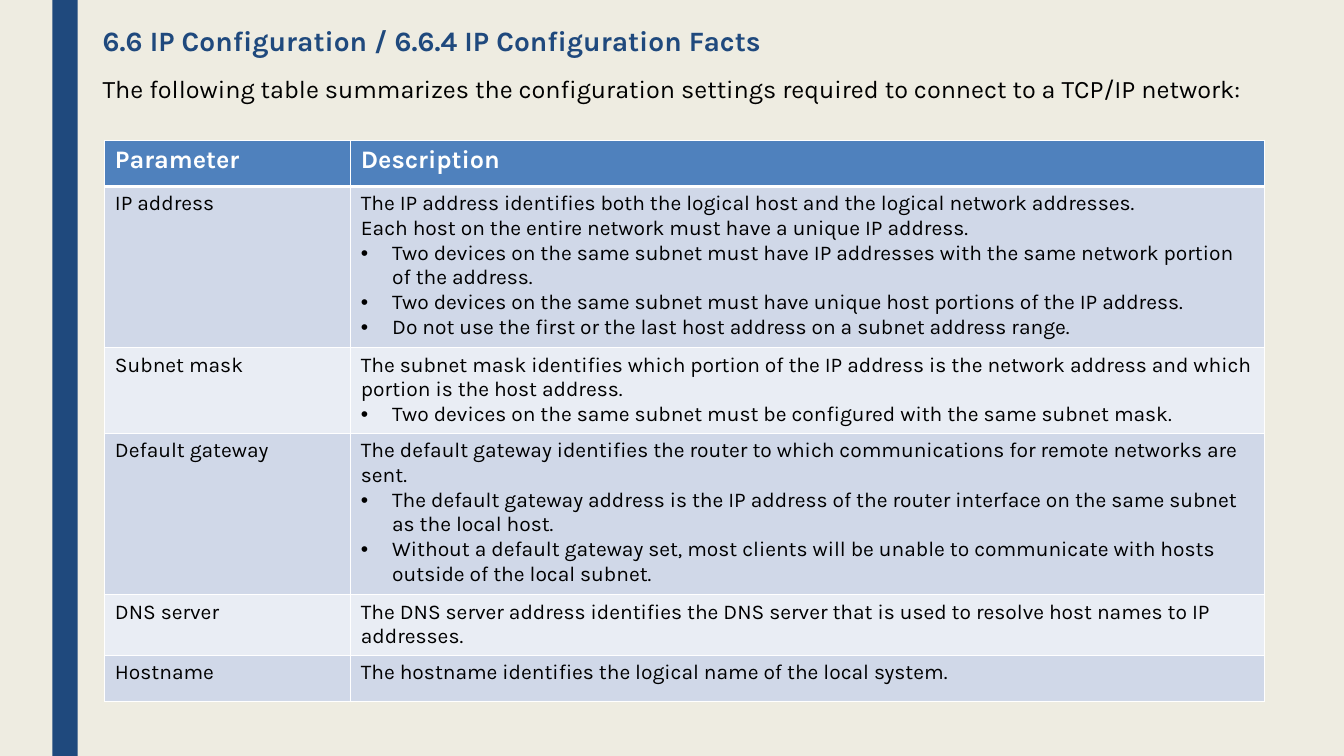
import pptx
import pptx.util
import pptx.dml.color
import pptx.enum.shapes
import pptx.oxml
import pptx.oxml.ns
from pptx.util import Inches

RGBColor = pptx.dml.color.RGBColor
NAVY = RGBColor(0x1F, 0x49, 0x7D)
CREAM = RGBColor(0xEE, 0xEC, 0xE1)
BLUE = RGBColor(0x4F, 0x81, 0xBD)
BAND_DARK = RGBColor(0xD0, 0xD8, 0xE8)
BAND_LIGHT = RGBColor(0xE9, 0xED, 0xF4)
WHITE = RGBColor(0xFF, 0xFF, 0xFF)
BLACK = RGBColor(0, 0, 0)
FONT = "Karla"
BULLET = "• "

# Each row: height, parameter, description paragraphs
ROWS = [
    (0.46, "Parameter", ["Description"]),
    (1.57, "IP address", [
        "The IP address identifies both the logical host and the logical network addresses.",
        "Each host on the entire network must have a unique IP address.",
        "• Two devices on the same subnet must have IP addresses with the same network portion of the address.",
        "• Two devices on the same subnet must have unique host portions of the IP address.",
        "• Do not use the first or the last host address on a subnet address range."]),
    (0.84, "Subnet mask", [
        "The subnet mask identifies which portion of the IP address is the network address and which portion is the host address.",
        "• Two devices on the same subnet must be configured with the same subnet mask."]),
    (1.57, "Default gateway", [
        "The default gateway identifies the router to which communications for remote networks are sent.",
        "• The default gateway address is the IP address of the router interface on the same subnet as the local host.",
        "• Without a default gateway set, most clients will be unable to communicate with hosts outside of the local subnet."]),
    (0.59, "DNS server", [
        "The DNS server address identifies the DNS server that is used to resolve host names to IP addresses."]),
    (0.46, "Hostname", ["The hostname identifies the logical name of the local system."]),
]


def write(tf, lines, size, color, bold=False):
    """Fill a text frame, turning lines that start with a bullet into list items."""
    tf.word_wrap = True
    for i, line in enumerate(lines):
        p = tf.paragraphs[0] if i == 0 else tf.add_paragraph()
        if line.startswith(BULLET):
            pPr = p._p.get_or_add_pPr()
            pPr.set("marL", str(Inches(0.31)))
            pPr.set("indent", str(Inches(-0.31)))
            ns = pptx.oxml.ns.nsdecls("a")
            pPr.append(pptx.oxml.parse_xml(f'<a:buFont {ns} typeface="Arial"/>'))
            pPr.append(pptx.oxml.parse_xml(f'<a:buChar {ns} char="•"/>'))
        r = p.add_run()
        r.text = line.removeprefix(BULLET)
        r.font.name = FONT
        r.font.size = pptx.util.Pt(size)
        r.font.bold = bold
        r.font.color.rgb = color


def add_borders(cell, bottom_width):
    """Draw white lines round a cell; call before its fill is set."""
    tcPr = cell._tc.get_or_add_tcPr()
    for side, width in (("L", 1), ("R", 1), ("T", 1), ("B", bottom_width)):
        tcPr.append(pptx.oxml.parse_xml(
            f'<a:ln{side} {pptx.oxml.ns.nsdecls("a")} w="{pptx.util.Pt(width)}">'
            f'<a:solidFill><a:srgbClr val="{WHITE}"/></a:solidFill></a:ln{side}>'))


prs = pptx.Presentation()
prs.slide_width = Inches(13.33)
prs.slide_height = Inches(7.5)
s = prs.slides.add_slide(prs.slide_layouts[6])
s.background.fill.solid()
s.background.fill.fore_color.rgb = CREAM

# Side stripe
stripe = s.shapes.add_shape(pptx.enum.shapes.MSO_SHAPE.RECTANGLE,
                            Inches(0.52), 0, Inches(0.25), prs.slide_height)
stripe.shadow.inherit = False
stripe.fill.solid()
stripe.fill.fore_color.rgb = NAVY
stripe.line.fill.background()

# Title
title = s.shapes.add_textbox(Inches(0.92), Inches(0.22), Inches(10.5), Inches(0.45))
write(title.text_frame, ["6.6 IP Configuration / 6.6.4 IP Configuration Facts"], 20, NAVY, True)
title.text_frame.paragraphs[0].line_spacing = 0.89

# Settings table
frame = s.shapes.add_table(len(ROWS), 2, Inches(1.04), Inches(1.39),
                           Inches(11.5), Inches(sum(row[0] for row in ROWS)))
table = frame.table
table.columns[0].width = Inches(2.44)
table.columns[1].width = Inches(9.06)
for i, (height, parameter, description) in enumerate(ROWS):
    table.rows[i].height = Inches(height)
    header = i == 0
    fill = BLUE if header else BAND_DARK if i % 2 else BAND_LIGHT
    for j, lines in enumerate(([parameter], description)):
        cell = table.cell(i, j)
        add_borders(cell, 3 if header else 1)
        cell.fill.solid()
        cell.fill.fore_color.rgb = fill
        write(cell.text_frame, lines, 18 if header else 15, WHITE if header else BLACK, header)

# Introduction
intro = s.shapes.add_textbox(Inches(0.92), Inches(0.68), Inches(11.5), Inches(0.71))
write(intro.text_frame,
      ["The following table summarizes the configuration settings required to connect to a TCP/IP network:"],
      18, BLACK)

prs.save("out.pptx")
